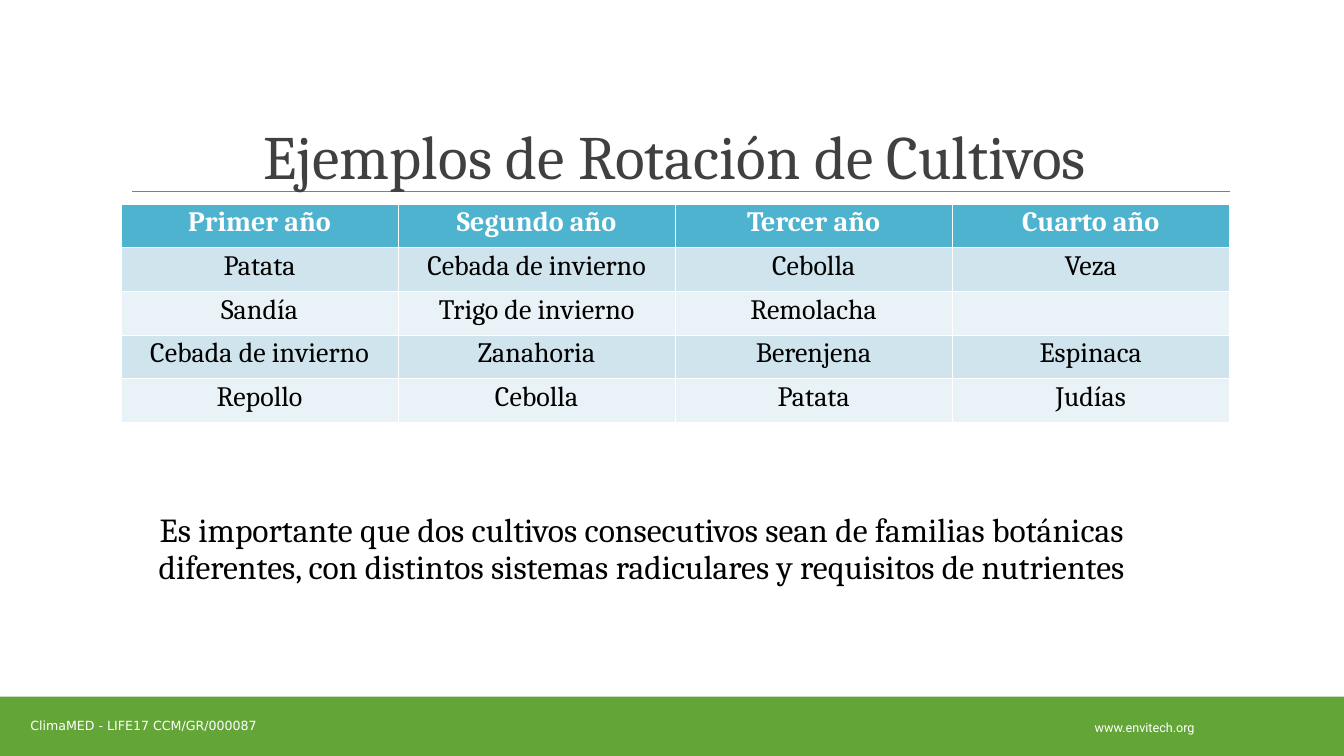
from dataclasses import dataclass

from lxml.etree import SubElement
from pptx import Presentation
from pptx.dml.color import RGBColor
from pptx.enum.shapes import MSO_CONNECTOR, MSO_SHAPE
from pptx.enum.text import MSO_ANCHOR, PP_ALIGN
from pptx.oxml.ns import qn
from pptx.util import Pt


@dataclass(frozen=True)
class Theme:
    white: str = "FFFFFF"
    ink: str = "000000"
    title: str = "404040"
    rule: str = "808080"
    footer: str = "63A537"
    header: str = "4EB3CF"
    bands: tuple = ("D0E4ED", "E9F2F6")
    serif: str = "Cambria"
    title_size: float = 44
    note_size: float = 24
    table_size: float = 20
    footer_size: float = 9
    rule_width: float = 0.5
    border_width: float = 0.06
    space_after: float = 0.6


THEME = Theme()

ROTATION = [
    ["Primer año", "Segundo año", "Tercer año", "Cuarto año"],
    ["Patata", "Cebada de invierno", "Cebolla", "Veza"],
    ["Sandía", "Trigo de invierno", "Remolacha", ""],
    ["Cebada de invierno", "Zanahoria", "Berenjena", "Espinaca"],
    ["Repollo", "Cebolla", "Patata", "Judías"],
]


def write(frame, wording, size, color, font=THEME.serif, spacing=1.0, bold=False):
    paragraph = frame.paragraphs[0]
    paragraph.text = wording
    paragraph.alignment = PP_ALIGN.CENTER
    paragraph.line_spacing = spacing
    paragraph.space_after = Pt(THEME.space_after)
    paragraph.font.name = font
    paragraph.font.size = Pt(size)
    paragraph.font.bold = bold
    paragraph.font.color.rgb = RGBColor.from_string(color)


def add_label(slide, box, anchor, insets=(0, 0)):
    frame = slide.shapes.add_textbox(*map(Pt, box)).text_frame
    frame.word_wrap = True
    frame.vertical_anchor = anchor
    frame.margin_left = frame.margin_right = Pt(insets[0])
    frame.margin_top = frame.margin_bottom = Pt(insets[1])
    return frame


def add_title(slide, box):
    left, top, width, height = box
    bottom = top + height
    rule = slide.shapes.add_connector(
        MSO_CONNECTOR.STRAIGHT, Pt(left + 8), Pt(bottom), Pt(left + width + 0.5), Pt(bottom))
    rule.line.color.rgb = RGBColor.from_string(THEME.rule)
    rule.line.width = Pt(THEME.rule_width)
    SubElement(rule._element.spPr, qn("a:effectLst"))
    heading = add_label(slide, box, MSO_ANCHOR.BOTTOM)
    write(heading, "Ejemplos de Rotación de Cultivos", THEME.title_size, THEME.title, spacing=0.85)


def add_borders(cell):
    properties = cell._tc.get_or_add_tcPr()
    for position, side in enumerate(("a:lnL", "a:lnR", "a:lnT", "a:lnB")):
        border = properties.makeelement(qn(side), {"w": str(Pt(THEME.border_width))})
        fill = SubElement(border, qn("a:solidFill"))
        SubElement(fill, qn("a:srgbClr"), val=THEME.white)
        properties.insert(position, border)


def add_rotation_table(slide, box):
    width, height = box[2:]
    rows, columns = len(ROTATION), len(ROTATION[0])
    table = slide.shapes.add_table(rows, columns, *map(Pt, box)).table
    for column in table.columns:
        column.width = Pt(width / columns)
    for index, crops in enumerate(ROTATION):
        table.rows[index].height = Pt(height / rows)
        is_header = index == 0
        fill = THEME.header if is_header else THEME.bands[(index - 1) % 2]
        color = THEME.white if is_header else THEME.ink
        for cell, crop in zip(table.rows[index].cells, crops):
            cell.fill.solid()
            cell.fill.fore_color.rgb = RGBColor.from_string(fill)
            cell.margin_top, cell.margin_bottom = Pt(3.6), Pt(2.6)
            add_borders(cell)
            write(cell.text_frame, crop, THEME.table_size, color, spacing=0.9, bold=is_header)


def add_note(slide, box):
    note = add_label(slide, box, MSO_ANCHOR.TOP, insets=(7.2, 3.6))
    write(note, "Es importante que dos cultivos consecutivos sean de familias botánicas diferentes, "
          "con distintos sistemas radiculares y requisitos de nutrientes",
          THEME.note_size, THEME.ink, spacing=0.9)


def add_footer(slide, box):
    left, top = box[:2]
    band = slide.shapes.add_shape(MSO_SHAPE.RECTANGLE, *map(Pt, box))
    band.shadow.inherit = False
    band.fill.solid()
    band.fill.fore_color.rgb = RGBColor.from_string(THEME.footer)
    band.line.fill.background()
    credits = [
        ("www.envitech.org", "Roboto", 729.5, 7.5, 177),
        ("ClimaMED - LIFE17 CCM/GR/000087", "DejaVu Sans", -11.5, 6.5, 228),
    ]
    for wording, font, across, down, width in credits:
        label = add_label(slide, (left + across, top + down, width, 29), MSO_ANCHOR.MIDDLE)
        write(label, wording, THEME.footer_size, THEME.white, font)


def main():
    deck = Presentation()
    deck.slide_width, deck.slide_height = Pt(960.5), Pt(540)
    slide = deck.slides.add_slide(deck.slide_layouts[6])
    add_footer(slide, (0, 497.5, 960.5, 42.5))
    add_title(slide, (86.5, 22.5, 792, 114.5))
    add_rotation_table(slide, (86.5, 145.5, 792, 156))
    add_note(slide, (86.5, 363.5, 744, 93.5))
    deck.save("out.pptx")


if __name__ == "__main__":
    main()
